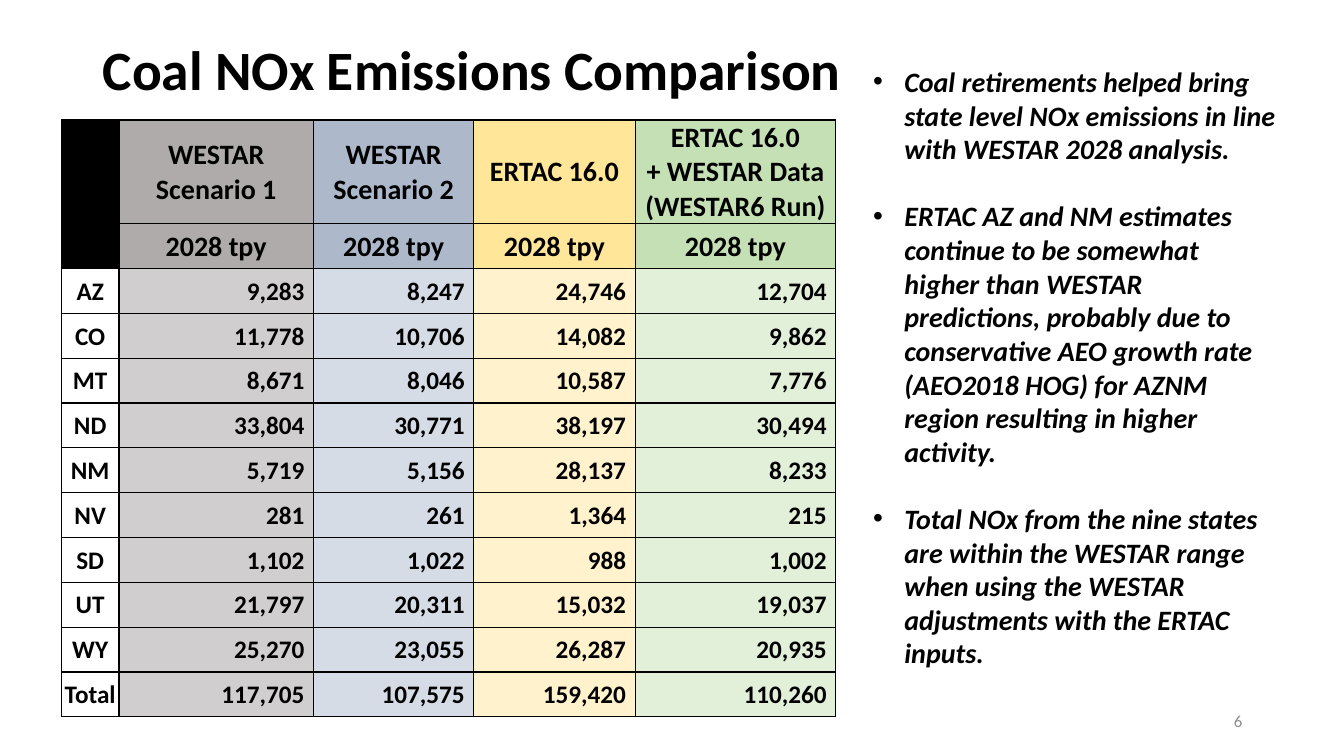
from dataclasses import dataclass
from lxml import etree
from pptx import Presentation
from pptx import util as u
from pptx.dml.color import RGBColor
from pptx.enum import text
from pptx.oxml import ns

PX = 9144  # EMU per px, 100 px to the inch
ALIGN = text.PP_ALIGN
MIDDLE = text.MSO_ANCHOR.MIDDLE


@dataclass(frozen=True)
class Theme:
    font: str = "Calibri"
    ink: str = "000000"
    muted: str = "8C8C8C"
    heads: tuple = ("AFABAB", "ADB9CA", "FFE699", "C5E0B4")
    tints: tuple = ("D0CECE", "D6DCE5", "FFF2CC", "E2F0D9")
    title: float = 39.6
    large: float = 20
    data: float = 18
    small: float = 12


T = Theme()

SCENARIOS = ("WESTAR\nScenario 1", "WESTAR\nScenario 2", "ERTAC 16.0",
             "ERTAC 16.0\v+ WESTAR Data\n(WESTAR6 Run)")
EMISSIONS = (
    ("AZ", 9283, 8247, 24746, 12704),
    ("CO", 11778, 10706, 14082, 9862),
    ("MT", 8671, 8046, 10587, 7776),
    ("ND", 33804, 30771, 38197, 30494),
    ("NM", 5719, 5156, 28137, 8233),
    ("NV", 281, 261, 1364, 215),
    ("SD", 1102, 1022, 988, 1002),
    ("UT", 21797, 20311, 15032, 19037),
    ("WY", 25270, 23055, 26287, 20935),
    ("Total", 117705, 107575, 159420, 110260),
)
FINDINGS = (
    "Coal retirements helped bring state level NOx emissions in line with "
    "WESTAR 2028 analysis.",
    "ERTAC AZ and NM estimates continue to be somewhat higher than WESTAR "
    "predictions, probably due to conservative AEO growth rate (AEO2018 HOG) "
    "for AZNM region resulting in higher activity.",
    "Total NOx from the nine states are within the WESTAR range when using "
    "the WESTAR adjustments with the ERTAC inputs.",
)


def px(n):
    return u.Emu(round(n * PX))


def place(sp, box):
    sp.left, sp.top, sp.width, sp.height = map(px, box)


def write(tf, content, size, color=T.ink, bold=True, italic=False,
          align=ALIGN.LEFT):
    """Fill a text frame; each line of content becomes a paragraph."""
    tf.text = content
    for p in tf.paragraphs:
        p.alignment = align
        for r in p.runs:
            f = r.font
            f.name, f.size, f.bold, f.italic = T.font, u.Pt(size), bold, italic
            f.color.rgb = RGBColor.from_string(color)


def outline_cell(cell):
    tc_pr = cell._tc.get_or_add_tcPr()
    for i, side in enumerate(("lnL", "lnR", "lnT", "lnB")):
        ln = etree.Element(ns.qn(f"a:{side}"), w=str(u.Pt(1)))
        fill = etree.SubElement(ln, ns.qn("a:solidFill"))
        etree.SubElement(fill, ns.qn("a:srgbClr"), val=T.ink)
        tc_pr.insert(i, ln)


def fill_cell(cell, content, size, fill=None, align=ALIGN.CENTER):
    write(cell.text_frame, content, size, align=align)
    cell.vertical_anchor = MIDDLE
    cell.margin_left = cell.margin_top = px(1)
    cell.margin_right = px(9 if align == ALIGN.RIGHT else 1)
    cell.margin_bottom = 0
    if fill:
        cell.fill.solid()
        cell.fill.fore_color.rgb = RGBColor.from_string(fill)
    else:
        cell.fill.background()
    outline_cell(cell)


def add_title(slide, box):
    sp = slide.shapes.title
    place(sp, box)
    tf = sp.text_frame
    tf.vertical_anchor = MIDDLE
    tf.auto_size = text.MSO_AUTO_SIZE.NONE
    write(tf, "Coal NOx Emissions Comparison", T.title)
    tf.paragraphs[0].line_spacing = 0.9


def add_emissions_table(slide, box):
    n_rows = len(EMISSIONS) + 2
    table = slide.shapes.add_table(n_rows, 5, *map(px, box)).table
    table.first_row = table.horz_banding = False
    for col, width in zip(table.columns, (57, 193, 159, 160, 199)):
        col.width = px(width)
    head_height = 103
    for row in table.rows:
        row.height = px((box[3] - head_height) / (n_rows - 1))
    table.rows[0].height = px(head_height)

    # Two header rows
    for i, labels in enumerate((SCENARIOS, ("2028 tpy",) * 4)):
        fill_cell(table.cell(i, 0), "", T.data, T.ink)
        for j, label in enumerate(labels):
            fill_cell(table.cell(i, j + 1), label, T.large, T.heads[j])

    # One row per state, then the total
    for i, (state, *tons) in enumerate(EMISSIONS, 2):
        fill_cell(table.cell(i, 0), state, T.data)
        for j, value in enumerate(tons):
            fill_cell(table.cell(i, j + 1), f"{value:,}", T.data,
                      T.tints[j], ALIGN.RIGHT)


def add_findings(slide, box):
    sp = slide.placeholders[1]
    place(sp, box)
    tf = sp.text_frame
    tf.auto_size = text.MSO_AUTO_SIZE.NONE
    write(tf, "\n".join(FINDINGS), T.large, italic=True)
    for i, p in enumerate(tf.paragraphs):
        p.space_before = u.Pt(24 if i else 0)
        p_pr = p._p.get_or_add_pPr()
        p_pr.set("marL", str(px(31)))
        p_pr.set("indent", str(px(-31)))
        etree.SubElement(p_pr, ns.qn("a:buFont"), typeface="Arial")
        etree.SubElement(p_pr, ns.qn("a:buChar"), char="•")


def add_page_number(slide, box):
    tf = slide.shapes.add_textbox(*map(px, box)).text_frame
    tf.word_wrap = True
    tf.vertical_anchor = MIDDLE
    write(tf, "6", T.small, T.muted, bold=False, align=ALIGN.RIGHT)


def main():
    prs = Presentation()
    prs.slide_width, prs.slide_height = px(1333), px(750)
    slide = prs.slides.add_slide(prs.slide_layouts[1])
    add_title(slide, (92, 40, 1150, 63))
    add_emissions_table(slide, (61, 119, 768, 592))
    add_findings(slide, (856, 59, 421, 616))
    add_page_number(slide, (942, 695, 300, 40))
    prs.save("out.pptx")


if __name__ == "__main__":
    main()
